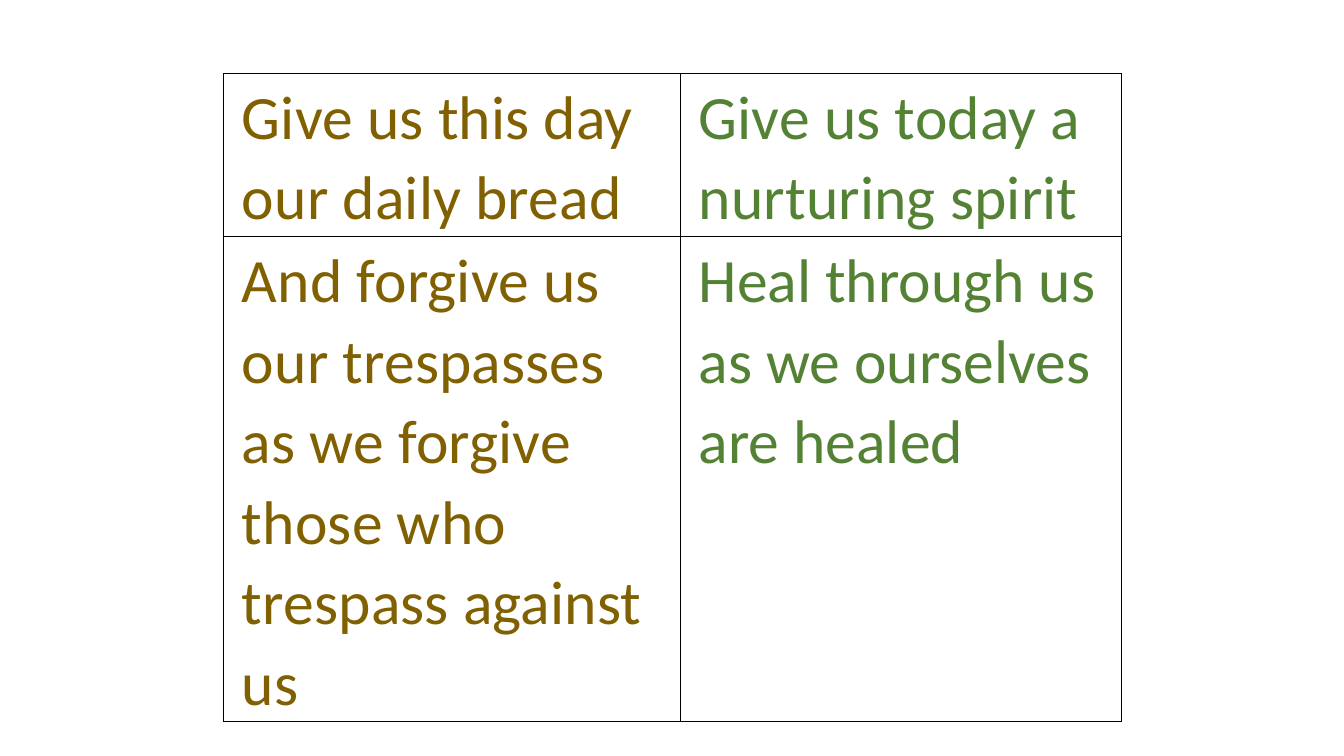
import dataclasses

import lxml.etree
import pptx
import pptx.dml.color
import pptx.oxml.ns
import pptx.util

Inches = pptx.util.Inches
Pt = pptx.util.Pt


@dataclasses.dataclass(frozen=True)
class Theme:
    font: str = "Calibri"
    verse_size: int = 44
    traditional: str = "806000"
    renewed: str = "548235"
    border: str = "000000"
    border_width: int = 1
    line_spacing: float = 1.07
    space_after: int = 8


@dataclasses.dataclass(frozen=True)
class Verse:
    text: str
    color: str
    tracking: int  # hundredths of a point


class SlideBuilder:
    def __init__(self, deck, theme):
        self.theme = theme
        self.slide = deck.slides.add_slide(deck.slide_layouts[6])

    def add_verse_table(self, left, top, height, column_widths, row_heights, verses):
        frame = self.slide.shapes.add_table(
            len(row_heights), len(column_widths), Inches(left), Inches(top),
            Inches(sum(column_widths)), Inches(height))
        table = frame.table
        table.first_row = False
        table.horz_banding = False
        for column, width in zip(table.columns, column_widths):
            column.width = Inches(width)
        for row, row_height in zip(table.rows, row_heights):
            row.height = Inches(row_height)
        frame.height = Inches(height)
        for row, row_verses in zip(table.rows, verses):
            for cell, verse in zip(row.cells, row_verses):
                self.fill_cell(cell, verse)

    def fill_cell(self, cell, verse):
        cell.margin_left = cell.margin_right = Inches(0.18)
        cell.margin_top = Inches(0.02)
        cell.margin_bottom = Inches(0)
        self.add_borders(cell)
        cell.fill.background()
        para = cell.text_frame.paragraphs[0]
        para.line_spacing = self.theme.line_spacing
        para.space_after = Pt(self.theme.space_after)
        span = para.add_run()
        span.text = verse.text
        span.font.name = self.theme.font
        span.font.size = Pt(self.theme.verse_size)
        span.font.color.rgb = pptx.dml.color.RGBColor.from_string(verse.color)
        span.font._element.set("spc", str(verse.tracking))

    def add_borders(self, cell):
        """Draw a solid line on all four sides; must precede the cell fill."""
        qn = pptx.oxml.ns.qn
        properties = cell._tc.get_or_add_tcPr()
        for side in ("a:lnL", "a:lnR", "a:lnT", "a:lnB"):
            line = lxml.etree.SubElement(
                properties, qn(side), w=str(Pt(self.theme.border_width)))
            fill = lxml.etree.SubElement(line, qn("a:solidFill"))
            lxml.etree.SubElement(fill, qn("a:srgbClr"), val=self.theme.border)


def main():
    deck = pptx.Presentation()
    deck.slide_width = Inches(13.33)
    deck.slide_height = Inches(7.5)
    theme = Theme()
    verses = [
        [Verse("Give us this day our daily bread", theme.traditional, 10),
         Verse("Give us today a nurturing spirit", theme.renewed, 10)],
        [Verse("And forgive us our trespasses as we forgive those who "
               "trespass against us", theme.traditional, 10),
         Verse("Heal through us as we ourselves are healed", theme.renewed, 0)],
    ]
    builder = SlideBuilder(deck, theme)
    builder.add_verse_table(
        left=2.22, top=0.73, height=6.33,
        column_widths=[4.53, 4.37], row_heights=[1.3, 3.06], verses=verses)
    deck.save("out.pptx")


if __name__ == "__main__":
    main()
